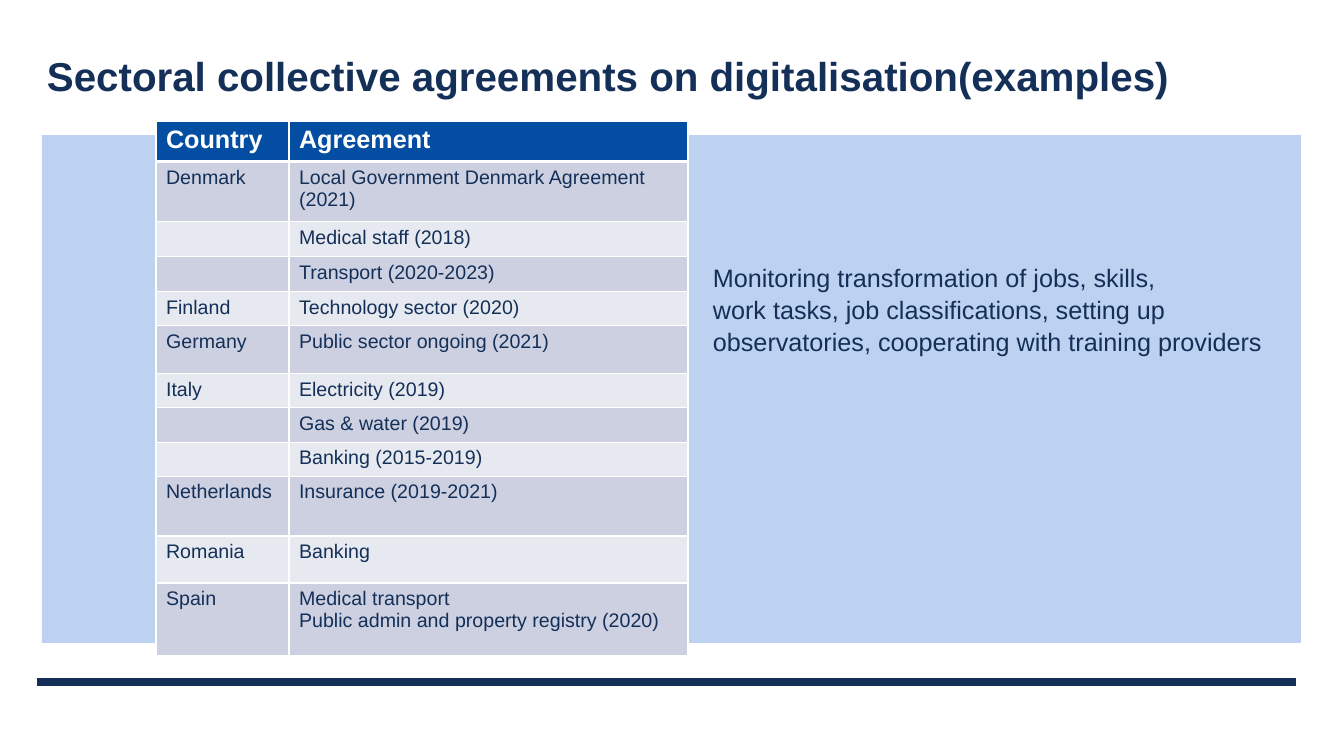
from lxml.etree import SubElement
from pptx import Presentation
from pptx.dml.color import RGBColor
from pptx.enum.shapes import MSO_CONNECTOR as Connector, MSO_SHAPE as Shape
from pptx.enum.text import MSO_ANCHOR as Anchor
from pptx.oxml.ns import qn
from pptx.util import Pt

EMU_PER_PX = 914400 / 100.8
NAVY, BLUE, PALE_BLUE, WHITE = "143058", "034EA2", "BDD2F0", "FFFFFF"
BANDS = ["CCD0E0", "E7E9F0"]

AGREEMENTS = [
    ("Country", "Agreement", 37),
    ("Denmark", "Local Government Denmark Agreement (2021)", 60),
    ("", "Medical staff (2018)", 35),
    ("", "Transport (2020-2023)", 35),
    ("Finland", "Technology sector (2020)", 34),
    ("Germany", "Public sector ongoing (2021)", 48),
    ("Italy", "Electricity (2019)", 34),
    ("", "Gas & water (2019)", 35),
    ("", "Banking (2015-2019)", 34),
    ("Netherlands", "Insurance (2019-2021)", 60),
    ("Romania", "Banking", 47),
    ("Spain", "Medical transport\nPublic admin and property registry (2020)", 73),
]


def px(length):
    """Turn px into EMU."""
    return round(length * EMU_PER_PX)


def color(value):
    """Turn a hex string into a colour."""
    return RGBColor.from_string(value)


def write(frame, text, size=18, fill=NAVY, bold=False, font="Arial", spacing=None):
    """Write each line of the text as a formatted paragraph."""
    for index, line in enumerate(text.split("\n")):
        paragraph = frame.add_paragraph() if index else frame.paragraphs[0]
        if spacing:
            paragraph.line_spacing = spacing
        if not line:
            SubElement(paragraph._p, qn("a:endParaRPr"), sz=str(size * 100))
            continue
        run = paragraph.add_run()
        run.text = line
        run.font.name, run.font.size, run.font.bold = font, Pt(size), bold
        run.font.color.rgb = color(fill)


def set_borders(cell, bottom):
    """Draw white borders around a table cell."""
    properties = cell._tc.get_or_add_tcPr()
    widths = {"lnL": 1, "lnR": 1, "lnT": 1, "lnB": bottom}
    for index, (side, width) in enumerate(widths.items()):
        line = SubElement(properties, qn(f"a:{side}"), w=str(Pt(width)))
        fill = SubElement(line, qn("a:solidFill"))
        SubElement(fill, qn("a:srgbClr"), val=WHITE)
        properties.remove(line)
        properties.insert(index, line)


class SlideBuilder:
    """Holds the slide and draws its elements."""

    def __init__(self, presentation):
        """Add a blank slide."""
        self.slide = presentation.slides.add_slide(presentation.slide_layouts[6])
        self.shapes = self.slide.shapes

    def rule(self, left, right, y, width):
        """Draw a horizontal line."""
        ends = [px(value) for value in (left, y, right, y)]
        line = self.shapes.add_connector(Connector.STRAIGHT, *ends)
        line.line.color.rgb = color(NAVY)
        line.line.width = Pt(width)
        SubElement(line._element.spPr, qn("a:effectLst"))

    def panel(self, *box):
        """Draw a plain filled rectangle."""
        shape = self.shapes.add_shape(Shape.RECTANGLE, *map(px, box))
        shape.shadow.inherit = False
        shape.fill.solid()
        shape.fill.fore_color.rgb = color(PALE_BLUE)
        shape.line.fill.background()

    def text(self, text, *box, anchor=Anchor.TOP, **style):
        """Add a wrapping text box."""
        frame = self.shapes.add_textbox(*map(px, box)).text_frame
        frame.word_wrap = True
        frame.vertical_anchor = anchor
        write(frame, text, **style)

    def table(self, rows, left, top, widths):
        """Add a banded table with a header row."""
        heights = [row[-1] for row in rows]
        box = map(px, (left, top, sum(widths), sum(heights)))
        table = self.shapes.add_table(len(rows), len(widths), *box).table
        for column, width in zip(table.columns, widths):
            column.width = px(width)
        for index, (*texts, height) in enumerate(rows):
            header = index == 0
            table.rows[index].height = px(height)
            for cell, text in zip(table.rows[index].cells, texts):
                cell.fill.solid()
                cell.fill.fore_color.rgb = color(BLUE if header else BANDS[(index - 1) % 2])
                set_borders(cell, bottom=3 if header else 1)
                write(cell.text_frame, text, size=18 if header else 14,
                      fill=WHITE if header else NAVY, bold=header)


def main():
    """Build the slide and save it."""
    presentation = Presentation()
    presentation.slide_width, presentation.slide_height = px(1344), px(756)
    builder = SlideBuilder(presentation)
    builder.rule(37, 1296, 682, width=6)
    builder.panel(42, 135, 1259, 508)
    builder.text("Sectoral collective agreements on digitalisation(examples)",
                 37, 32, 1259, 86, anchor=Anchor.MIDDLE, size=28.8, bold=True)
    builder.table(AGREEMENTS, 156, 121, [133, 399])
    builder.text("Monitoring transformation of jobs, skills,\n"
                 "work tasks, job classifications, setting up\n"
                 "observatories, cooperating with training providers",
                 703, 256, 582, 132, spacing=1.05)
    presentation.save("out.pptx")


if __name__ == "__main__":
    main()
